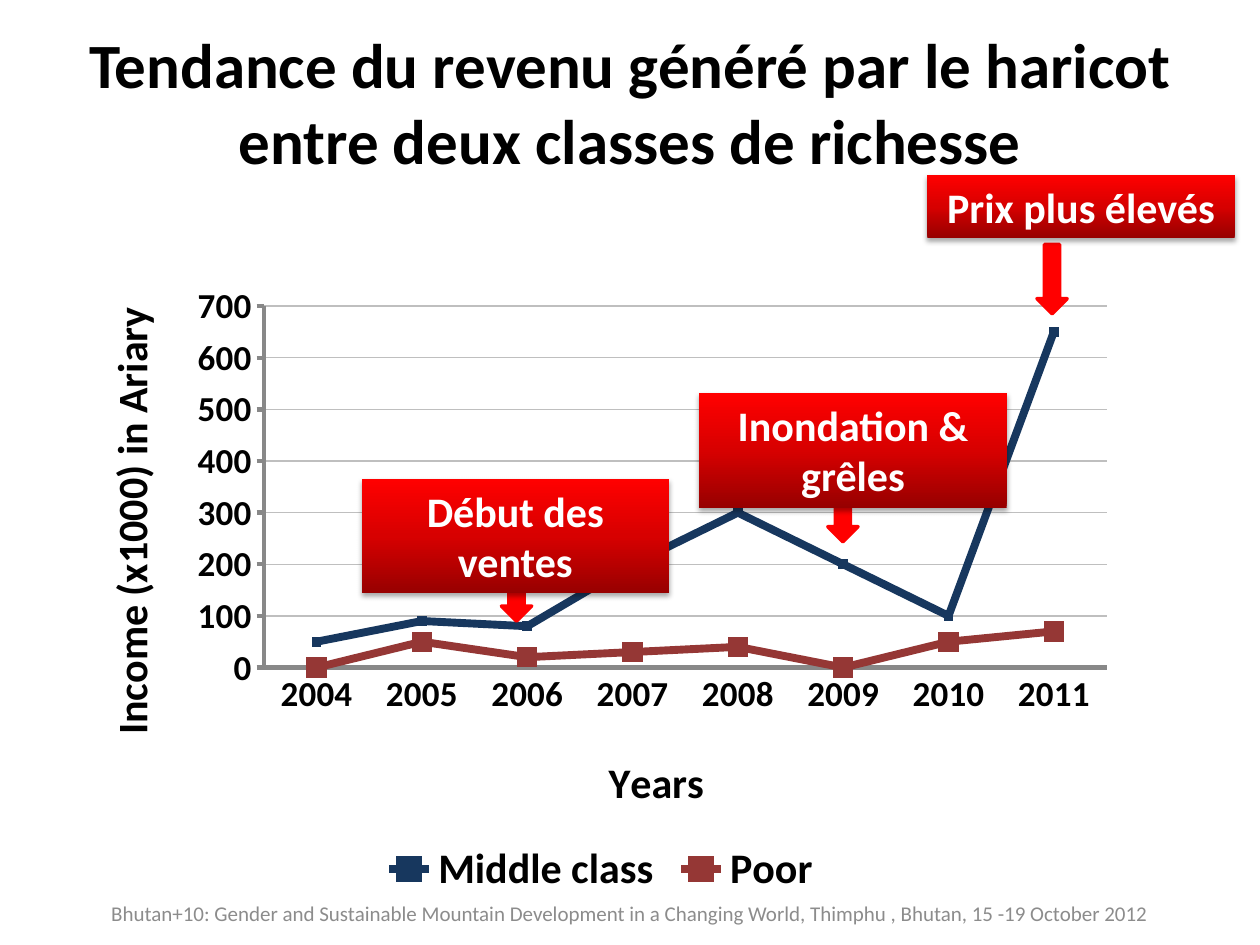
from dataclasses import dataclass

from lxml.etree import SubElement
from pptx import Presentation
from pptx.chart.data import CategoryChartData
from pptx.dml.color import RGBColor
from pptx.enum.chart import XL_CHART_TYPE, XL_LEGEND_POSITION, XL_MARKER_STYLE, XL_TICK_MARK
from pptx.enum.shapes import MSO_SHAPE
from pptx.enum.text import MSO_ANCHOR, MSO_AUTO_SIZE, PP_ALIGN
from pptx.oxml import parse_xml
from pptx.oxml.ns import qn
from pptx.util import Inches, Pt

FONT = "Calibri"
COLUMNS, ROWS = 100, 75
UNIT = Inches(0.1)  # one square grid cell
DRAWING = 'xmlns:a="http://schemas.openxmlformats.org/drawingml/2006/main"'
GRADIENT = ((0, "970000"), (50, "D70000"), (100, "FF0000"))


@dataclass(frozen=True)
class Area:
    column: float
    row: float
    columns: float
    rows: float

    def lengths(self) -> list[int]:
        return [round(n * UNIT) for n in (self.column, self.row, self.columns, self.rows)]


@dataclass(frozen=True)
class Callout:
    text: str
    column: float
    row: float
    rows: float
    arrow_column: float
    arrow_row: float


@dataclass(frozen=True)
class Income:
    name: str
    values: tuple[int, ...]
    color: str
    marker: XL_MARKER_STYLE
    marker_size: int


CALLOUTS = (
    Callout("Prix plus élevés", 73.6, 13.9, 5, 82.3, 19.4),
    Callout("Inondation & grêles", 55.5, 31.2, 9.1, 65.7, 37.5),
    Callout("Début des ventes", 28.7, 38, 9.1, 39.8, 43.8),
)
INCOMES = (
    Income("Middle class", (50, 90, 80, 200, 300, 200, 100, 650), "17375E",
           XL_MARKER_STYLE.AUTOMATIC, 5),
    Income("Poor", (0, 50, 20, 30, 40, 0, 50, 70), "953735", XL_MARKER_STYLE.SQUARE, 11),
)


def color(value: str) -> RGBColor:
    return RGBColor.from_string(value)


def style_font(font, size: float, value: str, bold: bool = True) -> None:
    font.name, font.size, font.bold = FONT, Pt(size), bold
    font.color.rgb = color(value)


def style_line(line, value: str, width: float) -> None:
    line.color.rgb = color(value)
    line.width = Pt(width)


def write(box, text: str, size: float, value: str, bold: bool = True,
          anchor: MSO_ANCHOR = MSO_ANCHOR.MIDDLE) -> None:
    frame = box.text_frame
    frame.word_wrap = True
    frame.vertical_anchor = anchor
    para = frame.paragraphs[0]
    para.alignment = PP_ALIGN.CENTER
    span = para.add_run()
    span.text = text
    style_font(span.font, size, value, bold)


def add_text(page, area: Area, text: str, size: float, value: str, bold: bool) -> None:
    write(page.shapes.add_textbox(*area.lengths()), text, size, value, bold)


def place(element, index: int, **shares: float) -> None:
    """Fix a chart part at shares of the chart's size."""
    layout = element.find(qn("c:layout"))
    if layout is None:
        layout = element.makeelement(qn("c:layout"))
        element.insert(index, layout)
    manual = SubElement(layout, qn("c:manualLayout"))
    if "w" in shares:
        SubElement(manual, qn("c:layoutTarget")).set("val", "inner")
    for mode in ("xMode", "yMode"):
        SubElement(manual, qn(f"c:{mode}")).set("val", "edge")
    for name, share in shares.items():
        SubElement(manual, qn(f"c:{name}")).set("val", str(share))


def style_axis(axis, title: str, tick: XL_TICK_MARK, x: float, y: float) -> None:
    span = axis.axis_title.text_frame.paragraphs[0].add_run()
    span.text = title
    style_font(span.font, 24, "000000")
    place(axis.axis_title._element, 1, x=x, y=y)
    style_font(axis.tick_labels.font, 20, "000000")
    axis.major_tick_mark, axis.minor_tick_mark = tick, XL_TICK_MARK.NONE
    style_line(axis.format.line, "888888", 2.5)


def add_income_chart(page) -> None:
    data = CategoryChartData()
    data.categories = [str(year) for year in range(2004, 2012)]
    for income in INCOMES:
        data.add_series(income.name, income.values)
    area = Area(5.9, 21.8, 83.6, 49.9)
    chart = page.shapes.add_chart(XL_CHART_TYPE.LINE_MARKERS, *area.lengths(), data).chart
    style_font(chart.font, 20, "000000")
    chart.has_title = False
    place(chart._chartSpace.chart.plotArea, 0, x=0.18, y=0.05, w=0.8, h=0.575)

    # Axes and grid
    style_axis(chart.category_axis, "Years", XL_TICK_MARK.NONE, 0.5, 0.75)
    style_axis(chart.value_axis, "Income (x1000) in Ariary", XL_TICK_MARK.OUTSIDE, 0.02, 0.04)
    chart.value_axis.minimum_scale, chart.value_axis.maximum_scale = 0, 700
    chart.value_axis.major_unit = 100
    style_line(chart.value_axis.major_gridlines.format.line, "BFBFBF", 0.75)

    # Lines and markers
    for series, income in zip(chart.plots[0].series, INCOMES):
        series.smooth = False
        style_line(series.format.line, income.color, 4.5)
        marker = series.marker
        marker.style, marker.size = income.marker, income.marker_size
        marker.format.fill.solid()
        marker.format.fill.fore_color.rgb = color(income.color)
        marker.format.line.color.rgb = color(income.color)

    # Legend
    chart.has_legend = True
    chart.legend.position = XL_LEGEND_POSITION.BOTTOM
    chart.legend.include_in_layout = False
    style_font(chart.legend.font, 24, "000000")


def add_arrow(page, area: Area) -> None:
    arrow = page.shapes.add_shape(MSO_SHAPE.DOWN_ARROW, *area.lengths())
    arrow.shadow.inherit = False
    arrow.fill.solid()
    arrow.fill.fore_color.rgb = color("FF0000")
    style_line(arrow.line, "FF0000", 2)


def add_callout(page, callout: Callout) -> None:
    add_arrow(page, Area(callout.arrow_column, callout.arrow_row, 2.4, 5.5))
    area = Area(callout.column, callout.row, 24.4, callout.rows)
    box = page.shapes.add_shape(MSO_SHAPE.RECTANGLE, *area.lengths())
    box.line.fill.background()

    # Three-stop gradient from bottom to top, with a soft shadow below
    stops = "".join(f'<a:gs pos="{share * 1000}"><a:srgbClr val="{value}"/></a:gs>'
                    for share, value in GRADIENT)
    properties = box._element.spPr
    properties.insert(2, parse_xml(
        f'<a:gradFill {DRAWING} rotWithShape="1"><a:gsLst>{stops}</a:gsLst>'
        '<a:lin ang="16200000" scaled="0"/></a:gradFill>'))
    properties.append(parse_xml(
        f'<a:effectLst {DRAWING}><a:outerShdw blurRad="{Pt(3.1)}" dist="{Pt(1.8)}" '
        'dir="5400000" rotWithShape="0"><a:srgbClr val="000000"><a:alpha val="35000"/>'
        '</a:srgbClr></a:outerShdw></a:effectLst>'))
    write(box, callout.text, 24, "FFFFFF", anchor=MSO_ANCHOR.TOP)
    box.text_frame.auto_size = MSO_AUTO_SIZE.SHAPE_TO_FIT_TEXT


def main() -> None:
    deck = Presentation()
    deck.slide_width, deck.slide_height = COLUMNS * UNIT, ROWS * UNIT
    page = deck.slides.add_slide(deck.slide_layouts[6])
    add_text(page, Area(5, 3, 90, 10.1),
             "Tendance du revenu généré par le haricot entre deux classes de richesse",
             36, "000000", True)
    add_income_chart(page)
    for callout in CALLOUTS:
        add_callout(page, callout)
    add_text(page, Area(5.1, 70.5, 89.8, 4),
             "Bhutan+10: Gender and Sustainable Mountain Development in a Changing World, "
             "Thimphu , Bhutan, 15 -19 October 2012", 12, "8C8C8C", False)
    deck.save("out.pptx")


if __name__ == "__main__":
    main()
